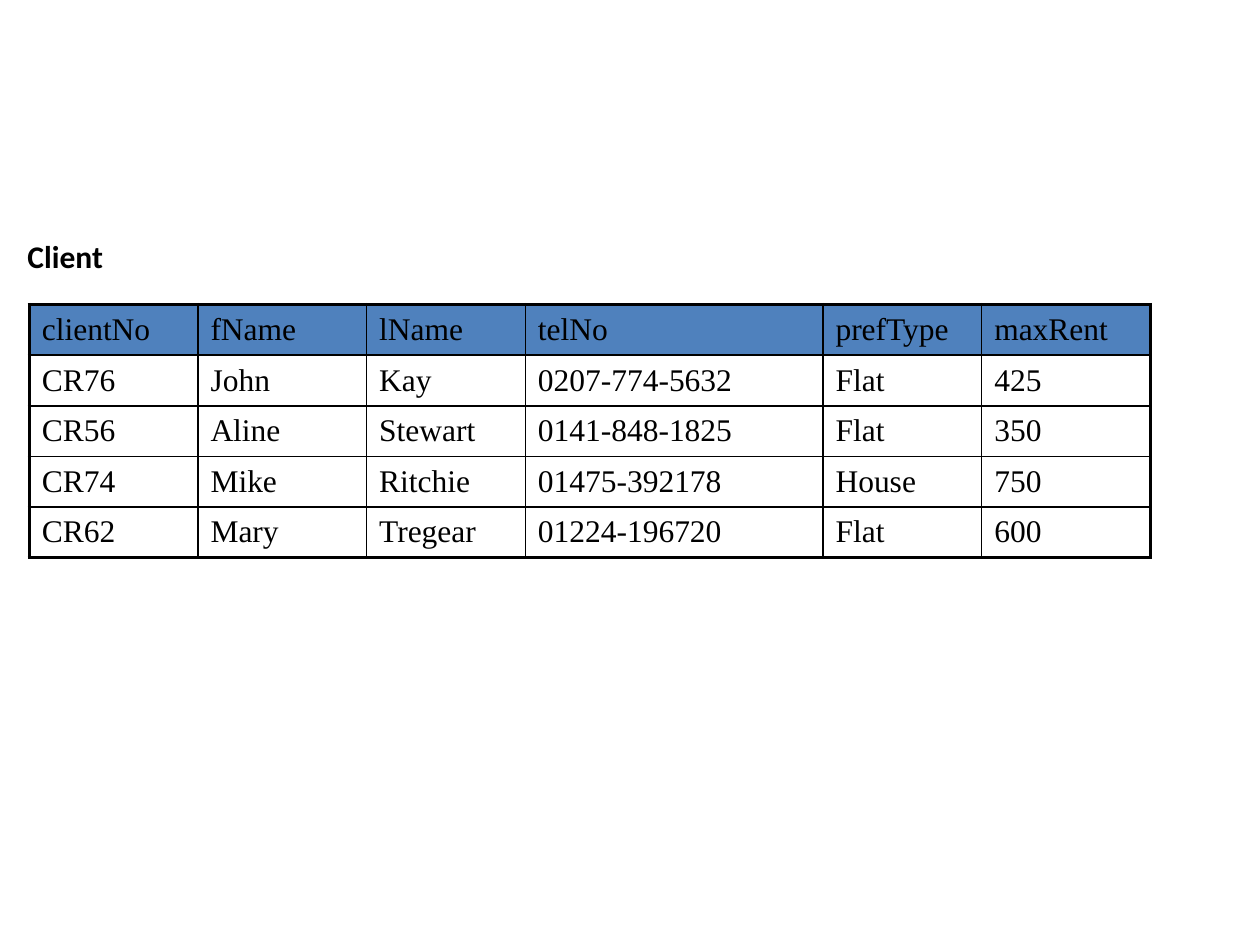
"""Build a slide showing the Client relation as a table."""
from dataclasses import dataclass

from lxml.etree import SubElement
from pptx import Presentation
from pptx.dml.color import RGBColor
from pptx.enum.text import MSO_ANCHOR, MSO_AUTO_SIZE, PP_ALIGN
from pptx.oxml.ns import qn
from pptx.util import Cm, Pt

RELATION = "Client"
ATTRIBUTES = ("clientNo", "fName", "lName", "telNo", "prefType", "maxRent")
CLIENTS = [
    ("CR76", "John", "Kay", "0207-774-5632", "Flat", "425"),
    ("CR56", "Aline", "Stewart", "0141-848-1825", "Flat", "350"),
    ("CR74", "Mike", "Ritchie", "01475-392178", "House", "750"),
    ("CR62", "Mary", "Tregear", "01224-196720", "Flat", "600"),
]
COLUMN_WIDTHS = (3.4, 3.4, 3.2, 6, 3.2, 3.4)
ROW_HEIGHT = 1.02


@dataclass(frozen=True)
class Theme:
    ink: str = "000000"
    header: str = "4F81BD"
    title_font: str = "Calibri"
    table_font: str = "Times New Roman"
    size: float = 18
    outer_line: float = 2.25
    inner_line: float = 1


THEME = Theme()


def format_text(frame, font_name, bold=False):
    for paragraph in frame.paragraphs:
        paragraph.alignment = PP_ALIGN.LEFT
        for run in paragraph.runs:
            run.font.name = font_name
            run.font.size = Pt(THEME.size)
            run.font.bold = bold
            run.font.color.rgb = RGBColor.from_string(THEME.ink)


def add_border(cell, side, weight):
    line = SubElement(cell._tc.get_or_add_tcPr(), qn(f"a:ln{side}"), w=str(Pt(weight)))
    fill = SubElement(line, qn("a:solidFill"))
    SubElement(fill, qn("a:srgbClr"), val=THEME.ink)


def add_title(slide):
    title = slide.shapes.title
    title.left, title.top, title.width, title.height = Cm(0.3), Cm(4.65), Cm(3.8), Cm(1.02)
    frame = title.text_frame
    frame.text = RELATION
    frame.auto_size = MSO_AUTO_SIZE.NONE
    frame.vertical_anchor = MSO_ANCHOR.MIDDLE
    format_text(frame, THEME.title_font, bold=True)


def add_client_table(slide):
    records = [ATTRIBUTES, *CLIENTS]
    last_row, last_column = len(records) - 1, len(ATTRIBUTES) - 1
    table = slide.shapes.add_table(
        len(records), len(ATTRIBUTES), Cm(0.59), Cm(6.14),
        Cm(sum(COLUMN_WIDTHS)), Cm(ROW_HEIGHT * len(records)),
    ).table
    table.first_row = table.horz_banding = False
    for column, width in zip(table.columns, COLUMN_WIDTHS):
        column.width = Cm(width)
    for r, record in enumerate(records):
        table.rows[r].height = Cm(ROW_HEIGHT)
        for c, value in enumerate(record):
            cell = table.cell(r, c)
            cell.text_frame.text = value
            cell.vertical_anchor = MSO_ANCHOR.MIDDLE
            format_text(cell.text_frame, THEME.table_font)
            on_edge = {"L": c == 0, "R": c == last_column, "T": r == 0, "B": r == last_row}
            for side, outer in on_edge.items():
                add_border(cell, side, THEME.outer_line if outer else THEME.inner_line)
            if r == 0:
                cell.fill.solid()
                cell.fill.fore_color.rgb = RGBColor.from_string(THEME.header)
            else:
                cell.fill.background()


def main():
    deck = Presentation()
    deck.slide_width, deck.slide_height = Cm(25.4), Cm(19.05)
    slide = deck.slides.add_slide(deck.slide_layouts.get_by_name("Title Only"))
    add_client_table(slide)
    add_title(slide)
    deck.save("out.pptx")


if __name__ == "__main__":
    main()
